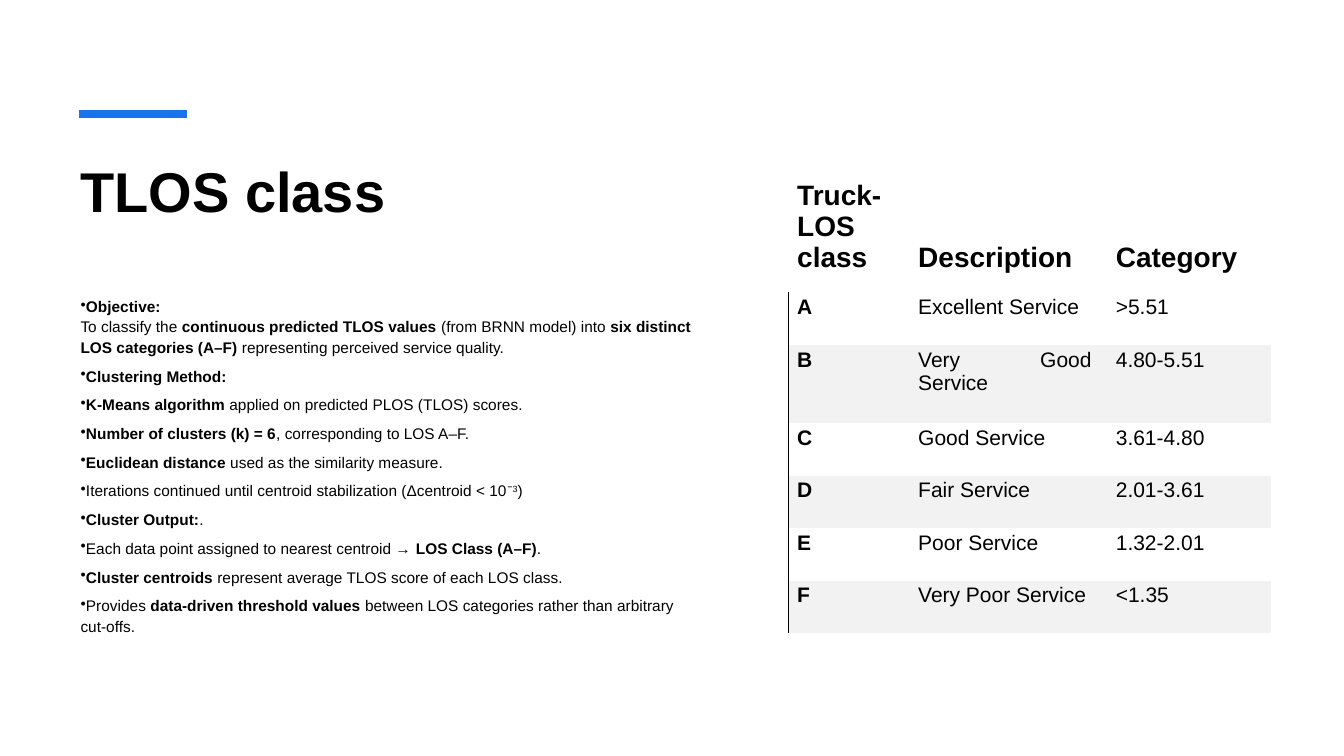
import pptx
import pptx.dml.color
import pptx.enum.shapes
import pptx.enum.text
import pptx.oxml
import pptx.oxml.ns
import pptx.util
from pptx.util import Cm

BLACK = pptx.dml.color.RGBColor(0x00, 0x00, 0x00)
BLUE = pptx.dml.color.RGBColor(0x19, 0x73, 0xEB)
GREY = pptx.dml.color.RGBColor(0xF2, 0xF2, 0xF2)
FONT = "Arial"
PLAIN = "{2D5ABB26-0587-4C30-8999-92F81FD0307C}"  # table style without grid
NS = pptx.oxml.ns.nsdecls("a")

# "|" switches bold on and off, "^" switches superscript, "\n" breaks the line
POINTS = [
    "|Objective:|\nTo classify the |continuous predicted TLOS values| (from BRNN model) into "
    "|six distinct LOS categories (A–F)| representing perceived service quality.",
    "|Clustering Method:|",
    "|K-Means algorithm| applied on predicted PLOS (TLOS) scores.",
    "|Number of clusters (k) = 6|, corresponding to LOS A–F.",
    "|Euclidean distance| used as the similarity measure.",
    "Iterations continued until centroid stabilization (Δcentroid < 10⁻^3^)",
    "|Cluster Output:|.",
    "Each data point assigned to nearest centroid → |LOS Class (A–F)|.",
    "|Cluster centroids| represent average TLOS score of each LOS class.",
    "Provides |data-driven threshold values| between LOS categories rather than arbitrary cut-offs.",
]
ROWS = [
    ("Truck-LOS class", "Description", "Category"),
    ("A", "Excellent Service", ">5.51"),
    ("B", "Very Good Service", "4.80-5.51"),
    ("C", "Good Service", "3.61-4.80"),
    ("D", "Fair Service", "2.01-3.61"),
    ("E", "Poor Service", "1.32-2.01"),
    ("F", "Very Poor Service", "<1.35"),
]
WIDTHS = (3.05, 4.98, 4.14)
HEIGHTS = (3.28, 1.32, 1.98, 1.32, 1.32, 1.32, 1.32)


def add_run(para, text, size, bold=False):
    run = para.add_run()
    run.text = text
    run.font.name = FONT
    run.font.size = pptx.util.Pt(size)
    run.font.bold = bold
    run.font.color.rgb = BLACK
    return run


def add_rich(para, text, size):
    for i, part in enumerate(text.split("|")):
        for j, piece in enumerate(part.split("^")):
            for k, line in enumerate(piece.split("\n")):
                if k:
                    para.add_line_break()
                if line:
                    run = add_run(para, line, size, i % 2 == 1)
                    if j % 2:
                        run.font._element.set("baseline", "30000")


def add_frame(slide, left, top, width, height):
    frame = slide.shapes.add_textbox(Cm(left), Cm(top), Cm(width), Cm(height)).text_frame
    frame.word_wrap = True
    return frame


def add_head(slide, left, top, width, height):
    # Accent bar above the title
    start, level = left + 0.2, top - 0.94
    bar = slide.shapes.add_connector(
        pptx.enum.shapes.MSO_CONNECTOR.STRAIGHT,
        Cm(start), Cm(level), Cm(start + 2.72), Cm(level))
    bar.line.color.rgb = BLUE
    bar.line.width = pptx.util.Pt(6)
    bar._element.spPr.append(pptx.oxml.parse_xml(f"<a:effectLst {NS}/>"))
    # Title
    frame = add_frame(slide, left, top, width, height)
    add_run(frame.paragraphs[0], "TLOS class", 40, True)


def add_points(slide, left, top, width, height):
    frame = add_frame(slide, left, top, width, height)
    for i, text in enumerate(POINTS):
        para = frame.add_paragraph() if i else frame.paragraphs[0]
        para.line_spacing = 1.1
        para.space_after = pptx.util.Pt(6)
        props = para._p.get_or_add_pPr()
        props.set("marL", "0")
        props.set("indent", "0")
        props.append(pptx.oxml.parse_xml(f'<a:buChar {NS} char="•"/>'))
        add_rich(para, text, 11)


def fill_cell(cell, text, row, col):
    cell.margin_left, cell.margin_top = Cm(0.23), Cm(0.08)
    cell.margin_right, cell.margin_bottom = Cm(0.38), Cm(0.48)
    para = cell.text_frame.paragraphs[0]
    para.alignment = pptx.enum.text.PP_ALIGN.JUSTIFY
    para.space_before = pptx.util.Pt(0.5)
    add_run(para, text, 15 if row else 20, row == 0 or col == 0)
    if row == 0:
        cell.vertical_anchor = pptx.enum.text.MSO_ANCHOR.BOTTOM
    # Every second class is shaded
    if row and row % 2 == 0:
        cell.fill.solid()
        cell.fill.fore_color.rgb = GREY
    else:
        cell.fill.background()
    # Rule left of the class letters
    if row and col == 0:
        cell._tc.get_or_add_tcPr().insert(0, pptx.oxml.parse_xml(
            f'<a:lnL {NS} w="9525"><a:solidFill><a:srgbClr val="{BLACK}"/></a:solidFill></a:lnL>'))


def add_classes(slide, left, top, width, height):
    table = slide.shapes.add_table(
        len(ROWS), len(WIDTHS), Cm(left), Cm(top), Cm(width), Cm(height)).table
    table.first_row = table.horz_banding = False
    table._tbl.tblPr.find(pptx.oxml.ns.qn("a:tableStyleId")).text = PLAIN
    for col, size in zip(table.columns, WIDTHS):
        col.width = Cm(size)
    for row, size in zip(table.rows, HEIGHTS):
        row.height = Cm(size)
    for r, texts in enumerate(ROWS):
        for c, text in enumerate(texts):
            fill_cell(table.cell(r, c), text, r, c)


def main():
    deck = pptx.Presentation()
    deck.slide_width, deck.slide_height = Cm(33.87), Cm(19.05)
    slide = deck.slides.add_slide(deck.slide_layouts[6])
    add_head(slide, 1.78, 3.81, 15.93, 3.05)
    add_points(slide, 1.78, 7.32, 15.95, 10.19)
    add_classes(slide, 19.86, 4.09, sum(WIDTHS), sum(HEIGHTS))
    deck.save("out.pptx")


if __name__ == "__main__":
    main()
